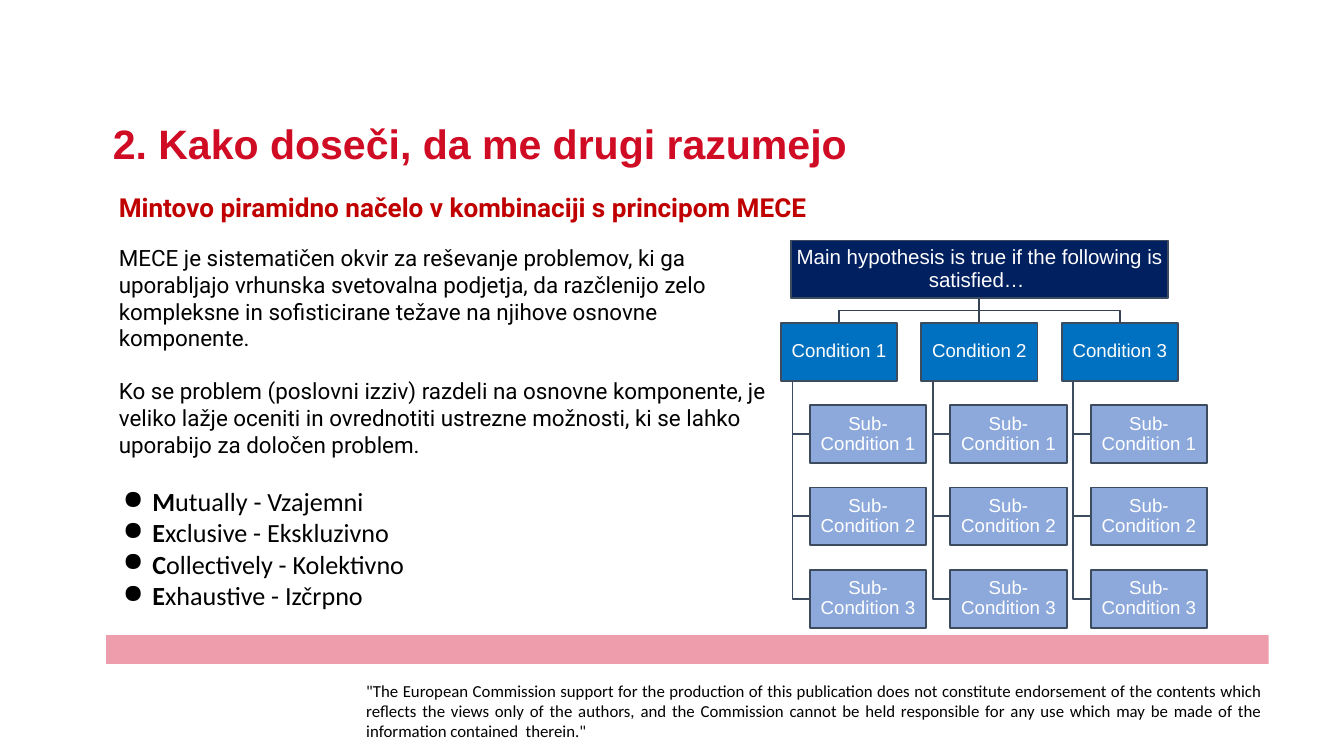
import pptx
import pptx.util
import pptx.dml.color
import pptx.enum.shapes
import pptx.enum.text
import pptx.oxml.ns
import lxml.etree

Inches, Pt = pptx.util.Inches, pptx.util.Pt
RGB = pptx.dml.color.RGBColor.from_string
ALIGN = pptx.enum.text.PP_ALIGN
RECTANGLE = pptx.enum.shapes.MSO_SHAPE.RECTANGLE
qn = pptx.oxml.ns.qn

COLORS = {
    "title": "D00B24", "subtitle": "C00000", "text": "000000", "white": "FFFFFF",
    "bar": "ED9DAB", "main": "002060", "condition": "0070C0", "sub": "8DA9DB",
    "outline": "3D4B5F", "top link": "354254",
}

deck = pptx.Presentation()
deck.slide_width, deck.slide_height = Inches(20), Inches(11.25)
page = deck.slides.add_slide(deck.slide_layouts[6])


def add_text(left, top, width, height, texts, size, font, color, bold=None, inset=0.1):
    """Add a wrapping text box with one paragraph per text; return its paragraphs."""
    box = page.shapes.add_textbox(Inches(left), Inches(top), Inches(width), Inches(height))
    frame = box.text_frame
    frame.word_wrap = True
    frame.margin_left = frame.margin_right = Inches(inset)
    frame.margin_top = frame.margin_bottom = Inches(inset / 2)
    frame.text = "\n".join(texts)
    for para in frame.paragraphs:
        para.font.size, para.font.name, para.font.bold = Pt(size), font, bold
        para.font.color.rgb = RGB(COLORS[color])
    return frame.paragraphs


def add_node(left, top, width, text, size, color):
    """Add one filled box of the condition tree."""
    box = page.shapes.add_shape(RECTANGLE, Inches(left), Inches(top), Inches(width), Inches(NODE_H))
    box.shadow.inherit = False
    box.fill.solid()
    box.fill.fore_color.rgb = RGB(COLORS[color])
    box.line.color.rgb, box.line.width = RGB(COLORS["outline"]), Pt(2)
    frame = box.text_frame
    frame.word_wrap = True
    frame.vertical_anchor = pptx.enum.text.MSO_ANCHOR.MIDDLE
    frame.margin_left = frame.margin_right = frame.margin_top = frame.margin_bottom = Inches(0.01)
    para = frame.paragraphs[0]
    para.text, para.alignment, para.line_spacing = text, ALIGN.CENTER, 0.9
    para.font.size, para.font.name = Pt(size), "Arial"
    para.font.color.rgb = RGB(COLORS["white"])


# Footer bar and disclaimer
bar = page.shapes.add_shape(RECTANGLE, Inches(1.58), Inches(9.45), Inches(17.3), Inches(0.43))
bar.shadow.inherit = False
bar.fill.solid()
bar.fill.fore_color.rgb = RGB(COLORS["bar"])
bar.line.fill.background()

disclaimer = add_text(5.45, 10.15, 13.33, 0.76, [
    '"The European Commission support for the production of this publication does not '
    'constitute endorsement of the contents which reflects the views only of the authors, '
    'and the Commission cannot be held responsible for any use which may be made of the '
    'information contained  therein."'], 18, "Calibri", "text", inset=0)[0]
disclaimer.alignment, disclaimer.line_spacing = ALIGN.JUSTIFY, 0.98

# Headings
add_text(1.58, 1.72, 13.46, 0.84, ["2. Kako doseči, da me drugi razumejo"],
         44, "Arial", "title", bold=True)
add_text(1.67, 2.8, 17.35, 0.57, ["Mintovo piramidno načelo v kombinaciji s principom MECE"],
         28, "Roboto", "subtitle", bold=True)

# Explanation, followed by the MECE bullets in the same box
mece = ["Mutually - Vzajemni", "Exclusive - Ekskluzivno",
        "Collectively - Kolektivno", "Exhaustive - Izčrpno"]
paras = add_text(1.67, 3.58, 10.03, 5.62, [
    "MECE je sistematičen okvir za reševanje problemov, ki ga uporabljajo vrhunska svetovalna "
    "podjetja, da razčlenijo zelo kompleksne in sofisticirane težave na njihove osnovne komponente.",
    "Ko se problem (poslovni izziv) razdeli na osnovne komponente, je veliko lažje oceniti in "
    "ovrednotiti ustrezne možnosti, ki se lahko uporabijo za določen problem.",
    *mece], 24, "Roboto", "text")
paras[1].space_before = Pt(28)

for para, phrase in zip(paras[2:], mece):
    para.clear()
    props = para._p.get_or_add_pPr()
    for child in list(props):
        props.remove(child)
    props.set("marL", str(Inches(0.5)))
    props.set("indent", str(Inches(-0.44)))
    bullet_color = lxml.etree.SubElement(props, qn("a:buClr"))
    lxml.etree.SubElement(bullet_color, qn("a:srgbClr"), val=COLORS["text"])
    lxml.etree.SubElement(props, qn("a:buChar"), char="●")
    for part, bold in ((phrase[0], True), (phrase[1:], False)):
        span = para.add_run()
        span.text, span.font.bold = part, bold
    para.font.size, para.font.name = Pt(28), "Calibri"
    para.font.color.rgb = RGB(COLORS["text"])
paras[2].space_before = Pt(29)

# Tree grid: equal boxes with one gap in both directions
NODE_W, NODE_H, GAP = 1.73, 0.86, 0.36
TREE_LEFT, TREE_TOP = 11.62, 3.58
columns = [TREE_LEFT + i * (NODE_W + GAP) for i in range(3)]
rows = [TREE_TOP + i * (NODE_H + GAP + 0.005) for i in range(5)]
SUB_INDENT, SPINE = NODE_W / 4, NODE_W / 10
MAIN_W = 5.62
center = columns[1] + NODE_W / 2
main_bottom = rows[0] + NODE_H

# Tree links: bent lines to the outer conditions and to every sub-condition
links = []
for left in columns:
    middle = left + NODE_W / 2
    if left != columns[1]:
        bend = main_bottom + GAP / 2
        links.append(("top link", [(center, main_bottom), (center, bend),
                                   (middle, bend), (middle, rows[1])]))
    for top in rows[2:]:
        level = top + NODE_H / 2
        links.append(("outline", [(left + SPINE, rows[1] + NODE_H), (left + SPINE, level),
                                  (left + SUB_INDENT, level)]))
for color, points in links:
    corners = [(Inches(x), Inches(y)) for x, y in points]
    outline = page.shapes.build_freeform(*corners[0])
    outline.add_line_segments(corners[1:], close=False)
    link = outline.convert_to_shape()
    link.shadow.inherit = False
    link.fill.background()
    link.line.color.rgb, link.line.width = RGB(COLORS[color]), Pt(2)

# Straight link to the middle condition
stem = page.shapes.add_connector(pptx.enum.shapes.MSO_CONNECTOR.STRAIGHT, Inches(center),
                                 Inches(main_bottom), Inches(center), Inches(rows[1]))
stem.line.color.rgb, stem.line.width = RGB(COLORS["top link"]), Pt(2)
lxml.etree.SubElement(stem._element.spPr, qn("a:effectLst"))

# Tree boxes
add_node(center - MAIN_W / 2, rows[0], MAIN_W,
         "Main hypothesis is true if the following is satisfied… ", 22, "main")
for number, left in enumerate(columns, 1):
    add_node(left, rows[1], NODE_W, f"Condition {number}", 20, "condition")
    for sub_number, top in enumerate(rows[2:], 1):
        add_node(left + SUB_INDENT, top, NODE_W, f"Sub-Condition {sub_number}", 20, "sub")

deck.save("out.pptx")
